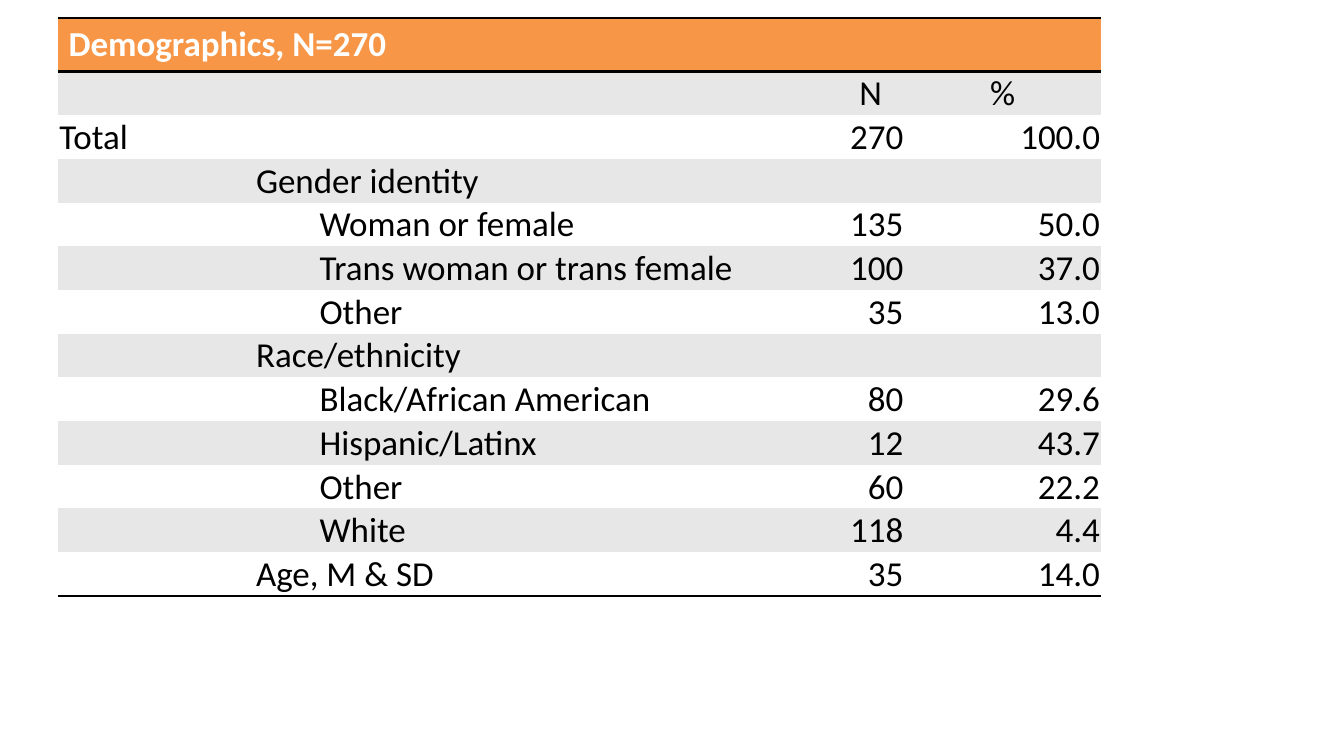
from lxml import etree
from pptx import Presentation
from pptx.dml.color import RGBColor
from pptx.enum.text import MSO_ANCHOR, PP_ALIGN
from pptx.oxml.ns import qn
from pptx.util import Inches, Pt

LEFT, CENTER, RIGHT = PP_ALIGN.LEFT, PP_ALIGN.CENTER, PP_ALIGN.RIGHT
BOTTOM = MSO_ANCHOR.BOTTOM
COLORS = {"header": "F79646", "band": "E7E7E7", "plain": "FFFFFF", "ink": "000000"}
NO_STYLE = "{2D5ABB26-0587-4C30-8999-92F81FD0307C}"
COLUMN_WIDTHS = [1.95, 0.63, 1.32, 1.95, 0.3, 1.57, 0.67, 1.95]
HEADER_HEIGHT, ROW_HEIGHT = 0.53, 0.43
N_COLUMN, PERCENT_COLUMN = 6, 7

# First column of the label, columns it spans, label, N, %
ROWS = [
    (1, 2, "", "N", "%"),
    (0, 3, "Total", "270", "100.0"),
    (1, 5, "Gender identity", "", ""),
    (2, 4, "Woman or female", "135", "50.0"),
    (2, 4, "Trans woman or trans female", "100", "37.0"),
    (2, 3, "Other", "35", "13.0"),
    (1, 5, "Race/ethnicity", "", ""),
    (2, 4, "Black/African American", "80", "29.6"),
    (2, 4, "Hispanic/Latinx", "12", "43.7"),
    (2, 3, "Other", "60", "22.2"),
    (2, 3, "White", "118", "4.4"),
    (1, 4, "Age, M & SD", "35", "14.0"),
]


def write(cell, text, color="ink", bold=False, align=LEFT, tight=True):
    """Fill a cell with text; tight cells have almost no margins and sit at the bottom."""
    if tight:
        cell.vertical_anchor = BOTTOM
        cell.margin_left = cell.margin_right = cell.margin_top = Inches(0.01)
        cell.margin_bottom = 0
    paragraph = cell.text_frame.paragraphs[0]
    paragraph.alignment = align
    run = paragraph.add_run()
    run.text = text
    run.font.name = "Calibri"
    run.font.size = Pt(25)
    run.font.bold = bold
    run.font.color.rgb = RGBColor.from_string(COLORS[color])


def rule_row(row, *sides):
    """Draw black rules on the given sides (lnT before lnB) of every cell in a row."""
    for cell in row.cells:
        properties = cell._tc.get_or_add_tcPr()
        for position, side in enumerate(sides):
            line = etree.Element(qn(f"a:{side}"), w=str(Pt(2)))
            fill = etree.SubElement(line, qn("a:solidFill"))
            etree.SubElement(fill, qn("a:srgbClr"), val=COLORS["ink"])
            properties.insert(position, line)


prs = Presentation()
prs.slide_width, prs.slide_height = Inches(13.33), Inches(7.5)
slide = prs.slides.add_slide(prs.slide_layouts[6])

demographics = slide.shapes.add_table(
    len(ROWS) + 1, len(COLUMN_WIDTHS), Inches(0.58), Inches(0.18),
    Inches(sum(COLUMN_WIDTHS)), Inches(HEADER_HEIGHT + ROW_HEIGHT * len(ROWS))).table
demographics.first_row = demographics.horz_banding = False
demographics._tbl.tblPr.find(qn("a:tableStyleId")).text = NO_STYLE

for column, width in zip(demographics.columns, COLUMN_WIDTHS):
    column.width = Inches(width)
for index, row in enumerate(demographics.rows):
    row.height = Inches(ROW_HEIGHT if index else HEADER_HEIGHT)
    band = "header" if index == 0 else "band" if index % 2 else "plain"
    for cell in row.cells:
        cell.fill.solid()
        cell.fill.fore_color.rgb = RGBColor.from_string(COLORS[band])

heading = demographics.cell(0, 0)
heading.merge(demographics.cell(0, PERCENT_COLUMN))
write(heading, "Demographics, N=270", color="plain", bold=True, tight=False)

for index, (start, span, label, count, percent) in enumerate(ROWS, 1):
    label_cell = demographics.cell(index, start)
    label_cell.merge(demographics.cell(index, start + span - 1))
    if label:
        write(label_cell, label)
    if count:
        align = RIGHT if label else CENTER
        write(demographics.cell(index, N_COLUMN), count, align=align)
        write(demographics.cell(index, PERCENT_COLUMN), percent, align=align)

rule_row(demographics.rows[0], "lnT", "lnB")
rule_row(demographics.rows[len(ROWS)], "lnB")

prs.save("out.pptx")
